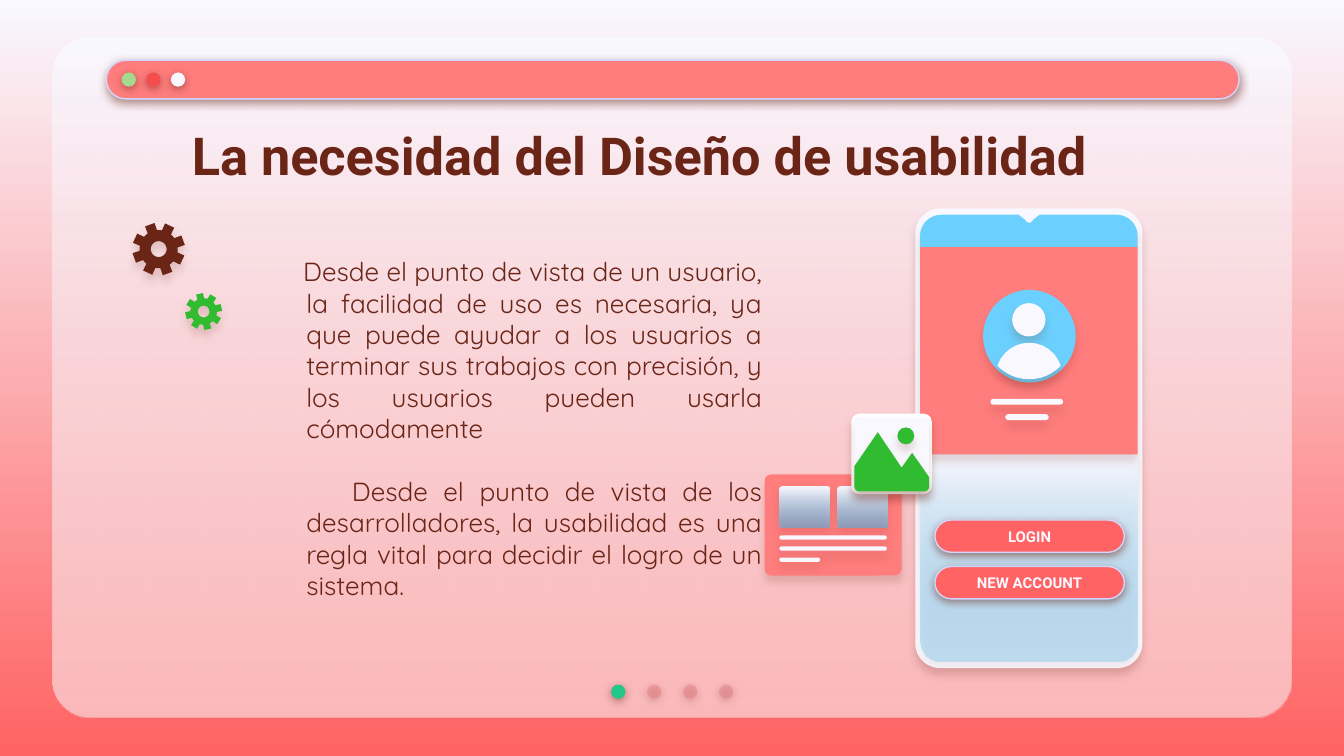
from math import cos, radians, sin

from lxml import etree
from pptx import Presentation
from pptx.dml.color import RGBColor
from pptx.enum.shapes import MSO_SHAPE
from pptx.enum.text import MSO_ANCHOR, PP_ALIGN
from pptx.oxml.ns import qn
from pptx.util import Cm, Pt

ROUND = MSO_SHAPE.ROUNDED_RECTANGLE
OVAL = MSO_SHAPE.OVAL
RECT = MSO_SHAPE.RECTANGLE
BASE = MSO_SHAPE.ROUND_2_SAME_RECTANGLE
MIDDLE = MSO_ANCHOR.MIDDLE
CENTER = PP_ALIGN.CENTER
JUSTIFY = PP_ALIGN.JUSTIFY

COLORS = {
    "snow": "F9F8FF", "white": "FFFFFF", "red": "FF6363", "coral": "FF7D7D",
    "blush": "FCA1A1", "brown": "6B2517", "edge": "D2D6FF", "mint": "23C787",
    "rose": "E27B83", "lime": "A3DA8D", "cherry": "F34D4D", "sky": "6BD0FD",
    "azure": "66BEE9", "blue": "4EB3E4", "green": "31BB31",
}
SOFT = (16, 3.8)
HARD = (50, 1.5)


def color(name):
    return RGBColor.from_string(COLORS[name])


def arc(x, y, size, start, end, steps=12):
    turns = [radians(start + (end - start) * i / steps) for i in range(steps + 1)]
    return [(x + size * cos(t), y + size * sin(t)) for t in turns]


class Deck:
    def __init__(self, wide, high):
        self.show = Presentation()
        self.show.slide_width = Cm(wide)
        self.show.slide_height = Cm(high)
        self.slide = self.show.slides.add_slide(self.show.slide_layouts[6])
        self.fade(self.slide.background.fill, "red")

    def fade(self, fill, tone):
        fill.gradient()
        fill.gradient_angle = 270
        for stop, name in zip(fill.gradient_stops, ("snow", tone)):
            stop.color.rgb = color(name)

    def paint(self, shape, tone, alpha=100, fade=False, shade=SOFT, edge=False):
        if fade:
            self.fade(shape.fill, tone)
        else:
            shape.fill.solid()
            shape.fill.fore_color.rgb = color(tone)
        props = shape._element.spPr
        if alpha < 100:
            last = list(props.iter(qn("a:srgbClr")))[-1]
            etree.SubElement(last, qn("a:alpha"), val=str(alpha * 1000))
        if edge:
            shape.line.color.rgb = color("edge")
            shape.line.width = Pt(0.75)
        else:
            shape.line.fill.background()
        shape.shadow.inherit = False
        if shade:
            depth, drop = shade
            cast = etree.SubElement(
                props.find(qn("a:effectLst")), qn("a:outerShdw"),
                blurRad=str(Pt(4.5)), dist=str(Pt(drop)), dir="5400000",
                algn="bl", rotWithShape="0")
            tint = etree.SubElement(cast, qn("a:srgbClr"), val=COLORS["brown"])
            etree.SubElement(tint, qn("a:alpha"), val=str(depth * 1000))
        return shape

    def shape(self, kind, box, tone, bend=(), **look):
        item = self.slide.shapes.add_shape(kind, *map(Cm, box))
        for i, value in enumerate(bend):
            item.adjustments[i] = value
        return self.paint(item, tone, **look)

    def dot(self, x, y, size, tone, **look):
        return self.shape(OVAL, (x, y, size, size), tone, **look)

    def pill(self, x, y, wide, high, tone, **look):
        return self.shape(ROUND, (x, y, wide, high), tone, (0.5,), **look)

    def free(self, tone, *loops):
        pen = None
        for loop in loops:
            spots = [(Cm(x), Cm(y)) for x, y in loop]
            if pen is None:
                pen = self.slide.shapes.build_freeform(*spots[0])
            else:
                pen.move_to(*spots[0])
            pen.add_line_segments(spots[1:], close=True)
        return self.paint(pen.convert_to_shape(), tone)

    def gear(self, x, y, tip, root, hole, phase, tone):
        rim = []
        for turn in range(phase, phase + 360, 45):
            rim += arc(x, y, tip, turn - 11, turn + 11, 1)
            rim += arc(x, y, root, turn + 15, turn + 30, 3)
        self.free(tone, rim, arc(x, y, hole, 0, 360, 32))

    def label(self, item, lines, size, font, tone, align, bold=False):
        frame = item.text_frame
        frame.word_wrap = True
        frame.vertical_anchor = MIDDLE
        frame.margin_left = frame.margin_right = Cm(0.25)
        frame.margin_top = frame.margin_bottom = Cm(0.25)
        frame.text = "\n".join(lines)
        for para in frame.paragraphs:
            para.alignment = align
            for run in para.runs:
                run.font.size = Pt(size)
                run.font.name = font
                run.font.bold = bold
                run.font.color.rgb = color(tone)
        return frame

    def text(self, box, lines, *style, **more):
        item = self.slide.shapes.add_textbox(*map(Cm, box))
        return self.label(item, lines, *style, **more)


def frame(deck):
    panel = (0.99, 0.71, 23.42, 12.85)
    deck.shape(ROUND, panel, "snow", (0.056,), shade=None)
    deck.shape(ROUND, panel, "blush", (0.056,), fade=True, alpha=72, shade=None)
    for i in range(4):
        tone, alpha = ("rose", 44) if i else ("mint", 100)
        deck.dot(11.55 + 0.68 * i, 12.94, 0.27, tone, alpha=alpha, shade=HARD)
    deck.pill(2.01, 1.14, 21.41, 0.73, "coral", shade=HARD, edge=True)
    for i, tone in enumerate(("lime", "cherry", "snow")):
        deck.dot(2.3 + 0.465 * i, 1.37, 0.27, tone, shade=HARD)


def words(deck):
    deck.text((1.57, 1.27, 21.01, 3.3), ["La necesidad del Diseño de usabilidad"],
              28, "Roboto", "brown", CENTER, bold=True)
    body = deck.text((4.27, 4.88, 10.39, 6.43), [
        "Desde el punto de vista de un usuario, la facilidad de uso es necesaria, "
        "ya que puede ayudar a los usuarios a terminar sus trabajos con precisión, "
        "y los usuarios pueden usarla cómodamente",
        "Desde el punto de vista de los desarrolladores, la usabilidad es una "
        "regla vital para decidir el logro de un sistema.",
    ], 14, "Quicksand", "brown", JUSTIFY)
    for para, shift in zip(body.paragraphs, (-0.06, 0.86)):
        para.line_spacing = Pt(16.8)
        props = para._p.get_or_add_pPr()
        props.set("marL", str(Cm(1.27)))
        props.set("indent", str(Cm(shift)))
    body.paragraphs[1].space_before = Pt(16.8)


def card(deck):
    deck.shape(ROUND, (14.45, 8.97, 2.59, 1.91), "coral", (0.065,))
    for i in range(2):
        deck.shape(ROUND, (14.73 + 1.1 * i, 9.19, 0.95, 0.78), "blue", (0.06,),
                   fade=True, alpha=58)
    for i, wide in enumerate((2.03, 2.03, 0.77)):
        deck.pill(14.73, 10.12 + 0.21 * i, wide, 0.08, "snow")


def phone(deck):
    left, top, wide, high = 17.39, 4.67, 4.11, 3.92
    right, mid, brow, bend = left + wide, 19.45, 4.06, 0.4
    deck.shape(ROUND, (17.3, 3.94, 4.29, 8.69), "snow", (0.11,))
    deck.shape(BASE, (left, top + high, wide, high), "azure", (0, 0.1),
               fade=True, alpha=35)
    deck.free("sky", [(left, top)]
              + arc(left + bend, brow + bend, bend, 180, 270)
              + [(mid - 0.2, brow)] + arc(mid, 4.13, 0.08, 160, 20)
              + [(mid + 0.2, brow)]
              + arc(right - bend, brow + bend, bend, 270, 360)
              + [(right, top)])
    deck.shape(RECT, (left, top, wide, high), "coral")
    deck.dot(18.58, 5.48, 1.75, "sky")
    deck.dot(19.13, 5.73, 0.63, "snow")
    deck.free("snow", arc(mid, 7.11, 0.63, 199, 341) + arc(mid, 6.34, 0.83, 44, 136))
    deck.pill(18.72, 7.54, 1.37, 0.11, "snow")
    deck.pill(19, 7.83, 0.82, 0.11, "snow")
    for i, name in enumerate(("LOGIN", "NEW ACCOUNT")):
        key = deck.pill(17.67, 9.83 + 0.88 * i, 3.58, 0.61, "red", shade=HARD, edge=True)
        deck.label(key, [name], 8, "Roboto", "snow", CENTER, bold=True)


def photo(deck):
    deck.shape(ROUND, (16.09, 7.82, 1.52, 1.52), "white", (0.1,))
    deck.shape(ROUND, (16.15, 7.88, 1.41, 1.41), "snow", (0.065,))
    deck.free("green", [(16.59, 8.17), (16.15, 8.81)]
              + arc(16.24, 9.2, 0.09, 180, 90) + arc(17.47, 9.2, 0.09, 90, 0)
              + [(17.56, 9.02), (17.24, 8.56), (17.04, 8.84)])
    deck.dot(16.96, 8.08, 0.32, "green")


def main():
    deck = Deck(25.4, 14.29)
    frame(deck)
    words(deck)
    card(deck)
    phone(deck)
    photo(deck)
    deck.gear(3, 4.71, 0.5, 0.36, 0.15, 25, "brown")
    deck.gear(3.85, 5.89, 0.35, 0.25, 0.11, 32, "green")
    deck.show.save("out.pptx")


if __name__ == "__main__":
    main()
